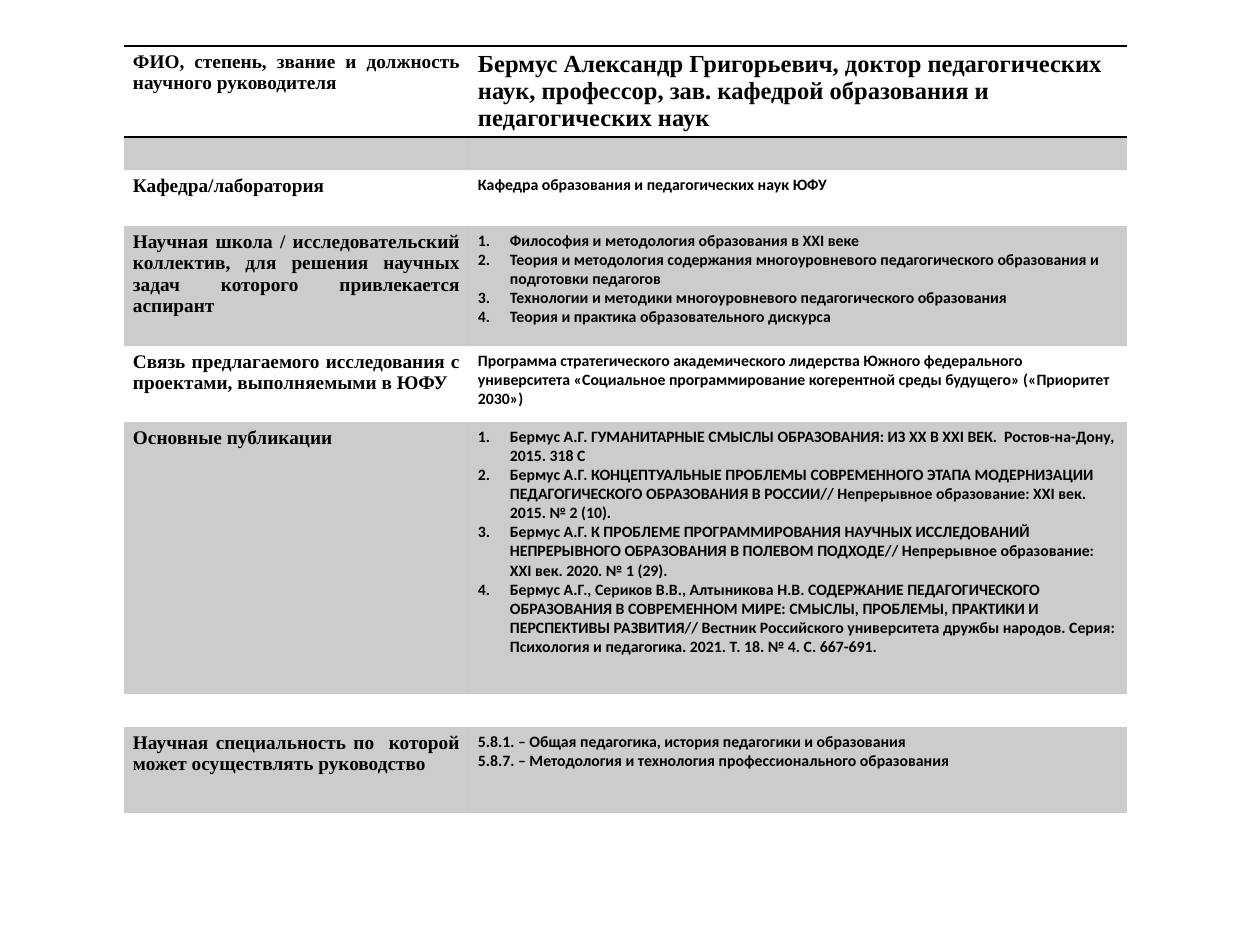
"""Build a one-slide profile table of a scientific supervisor."""
from dataclasses import dataclass

from lxml.etree import SubElement
from pptx import Presentation
from pptx.dml.color import RGBColor
from pptx.enum.text import PP_ALIGN as Align
from pptx.oxml import parse_xml
from pptx.oxml.ns import nsdecls, qn
from pptx.util import Pt

SCALE = 914400 // 126
SLIDE_SIZE = 1260, 945
TABLE_LEFT, TABLE_TOP = 124, 46
COLUMN_WIDTHS = 345, 658
MARGIN_X, MARGIN_Y, INDENT = 9, 5, 32
NO_STYLE = "{2D5ABB26-0587-4C30-8999-92F81FD0307C}"


@dataclass(frozen=True)
class Theme:
    ink: str = "000000"
    band_alpha: int = 20000
    label_font: str = "Times New Roman"
    body_font: str = "Calibri"
    label_size: int = 11
    title_size: int = 14
    body_size: int = 9
    rule_width: int = 1


THEME = Theme()
LABEL = {"name": THEME.label_font, "size": Pt(THEME.label_size)}
TITLE = {"name": THEME.label_font, "size": Pt(THEME.title_size)}
BODY = {"name": THEME.body_font, "size": Pt(THEME.body_size)}

ROWS = [
    (90, "ФИО, степень, звание и должность научного руководителя",
     ["Бермус Александр Григорьевич, доктор педагогических наук, профессор, "
      "зав. кафедрой образования и педагогических наук"], False),
    (33, "", [], False),
    (56, "Кафедра/лаборатория", ["Кафедра образования и педагогических наук ЮФУ"], False),
    (120, "Научная школа / исследовательский коллектив, для решения научных задач "
          "которого привлекается аспирант",
     ["Философия и методология образования в XXI веке",
      "Теория и методология содержания многоуровневого педагогического образования "
      "и подготовки педагогов",
      "Технологии и методики многоуровневого педагогического образования",
      "Теория и практика образовательного дискурса"], True),
    (76, "Связь предлагаемого исследования с проектами, выполняемыми в ЮФУ",
     ["Программа стратегического академического лидерства Южного федерального "
      "университета «Социальное программирование когерентной среды будущего» "
      "(«Приоритет 2030»)"], False),
    (272, "Основные публикации",
     ["Бермус А.Г. ГУМАНИТАРНЫЕ СМЫСЛЫ ОБРАЗОВАНИЯ: ИЗ XX В XXI ВЕК.  "
      "Ростов-на-Дону, 2015. 318 С",
      "Бермус А.Г. КОНЦЕПТУАЛЬНЫЕ ПРОБЛЕМЫ СОВРЕМЕННОГО ЭТАПА МОДЕРНИЗАЦИИ "
      "ПЕДАГОГИЧЕСКОГО ОБРАЗОВАНИЯ В РОССИИ// Непрерывное образование: XXI век. "
      "2015. № 2 (10).",
      "Бермус А.Г. К ПРОБЛЕМЕ ПРОГРАММИРОВАНИЯ НАУЧНЫХ ИССЛЕДОВАНИЙ НЕПРЕРЫВНОГО "
      "ОБРАЗОВАНИЯ В ПОЛЕВОМ ПОДХОДЕ// Непрерывное образование: XXI век. "
      "2020. № 1 (29).",
      "Бермус А.Г., Сериков В.В., Алтыникова Н.В. СОДЕРЖАНИЕ ПЕДАГОГИЧЕСКОГО "
      "ОБРАЗОВАНИЯ В СОВРЕМЕННОМ МИРЕ: СМЫСЛЫ, ПРОБЛЕМЫ, ПРАКТИКИ И ПЕРСПЕКТИВЫ "
      "РАЗВИТИЯ// Вестник Российского университета дружбы народов. Серия: "
      "Психология и педагогика. 2021. Т. 18. № 4. С. 667-691."], True),
    (33, "", [], False),
    (86, "Научная специальность по  которой может осуществлять руководство",
     ["5.8.1. – Общая педагогика, история педагогики и образования",
      "5.8.7. – Методология и технология профессионального образования"], False),
    (33, "", [], False),
]


def px(length):
    return length * SCALE


def set_values(target, values):
    for name, value in values.items():
        setattr(target, name, value)


def number_paragraph(paragraph):
    properties = paragraph._p.get_or_add_pPr()
    properties.set("marL", str(px(INDENT)))
    properties.set("indent", str(-px(INDENT)))
    SubElement(properties, qn("a:buAutoNum"), type="arabicPeriod")


def write_cell(cell, lines, style, align, numbered=False):
    set_values(cell, {"margin_left": px(MARGIN_X), "margin_right": px(MARGIN_X),
                      "margin_top": px(MARGIN_Y), "margin_bottom": px(MARGIN_Y)})
    frame = cell.text_frame
    if not lines:
        SubElement(frame.paragraphs[0]._p, qn("a:endParaRPr"), sz=str(THEME.body_size * 100))
    for index, line in enumerate(lines):
        paragraph = frame.add_paragraph() if index else frame.paragraphs[0]
        paragraph.alignment = align
        if numbered:
            number_paragraph(paragraph)
        run = paragraph.add_run()
        run.text = line
        set_values(run.font, {**style, "bold": True})
        run.font.color.rgb = RGBColor.from_string(THEME.ink)


def fill_cell(cell, banded):
    if not banded:
        cell.fill.background()
        return
    cell.fill.solid()
    cell.fill.fore_color.rgb = RGBColor.from_string(THEME.ink)
    color = cell._tc.tcPr.find(f".//{qn('a:srgbClr')}")
    SubElement(color, qn("a:alpha"), val=str(THEME.band_alpha))


def rule_cell(cell):
    for position, side in enumerate(("lnT", "lnB")):
        cell._tc.tcPr.insert(position, parse_xml(
            f'<a:{side} {nsdecls("a")} w="{Pt(THEME.rule_width)}"><a:solidFill>'
            f'<a:srgbClr val="{THEME.ink}"/></a:solidFill></a:{side}>'))


def add_profile_table(slide):
    heights = [row[0] for row in ROWS]
    table = slide.shapes.add_table(
        len(ROWS), len(COLUMN_WIDTHS), px(TABLE_LEFT), px(TABLE_TOP),
        px(sum(COLUMN_WIDTHS)), px(sum(heights))).table
    set_values(table, {"first_row": False, "horz_banding": False})
    table._tbl.tblPr.find(qn("a:tableStyleId")).text = NO_STYLE
    for column, width in zip(table.columns, COLUMN_WIDTHS):
        column.width = px(width)
    for index, (height, label, lines, numbered) in enumerate(ROWS):
        table.rows[index].height = px(height)
        label_cell, body_cell = table.rows[index].cells
        write_cell(label_cell, [label] if label else [], LABEL, Align.JUSTIFY)
        write_cell(body_cell, lines, BODY if index else TITLE, Align.LEFT, numbered)
        for cell in (label_cell, body_cell):
            fill_cell(cell, index % 2 == 1)
            if index == 0:
                rule_cell(cell)


def main():
    presentation = Presentation()
    presentation.slide_width, presentation.slide_height = map(px, SLIDE_SIZE)
    slide = presentation.slides.add_slide(presentation.slide_layouts[6])
    add_profile_table(slide)
    presentation.save("out.pptx")


if __name__ == "__main__":
    main()
